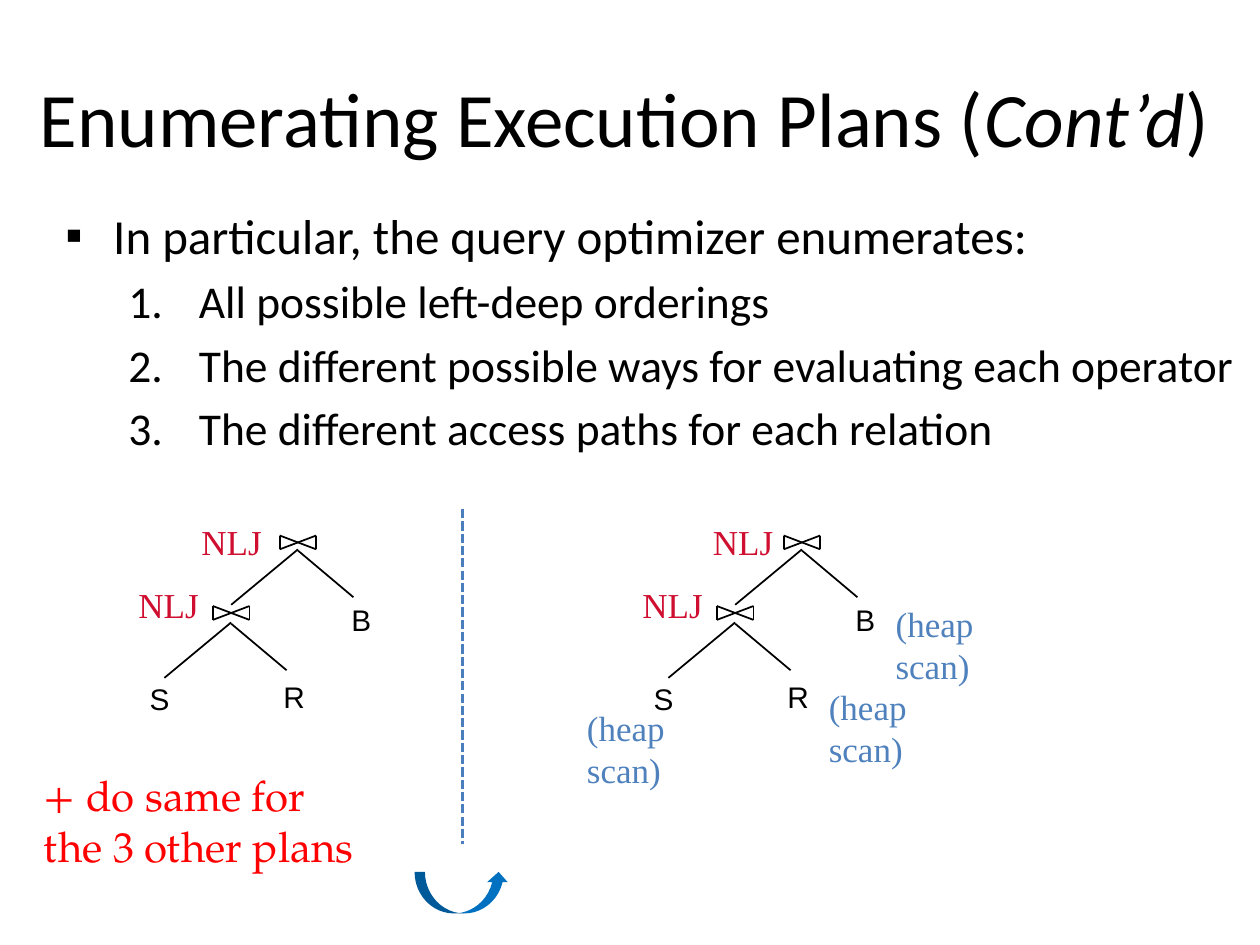
import lxml.etree
import pptx
import pptx.dml.color
import pptx.enum.dml
import pptx.enum.shapes
import pptx.enum.text
import pptx.oxml.ns
import pptx.util
from pptx.util import Inches

BLACK, RED, CRIMSON, BLUE = "000000", "FF0000", "CF0E30", "4F81BD"
SERIF = "Times New Roman"


def color(value):
    return pptx.dml.color.RGBColor.from_string(value)


def child(parent, tag, **attrs):
    return lxml.etree.SubElement(parent, pptx.oxml.ns.qn(tag), attrs)


def set_font(p, size, name, fill):
    p.font.size = pptx.util.Pt(size)
    p.font.name = name
    p.font.color.rgb = color(fill)


def add_box(s, x, y, w, h, wrap=True):
    tf = s.shapes.add_textbox(Inches(x), Inches(y), Inches(w), Inches(h)).text_frame
    tf.word_wrap = wrap
    return tf


def add_label(s, x, y, w, h, text, size, name, fill, wrap=False):
    tf = add_box(s, x, y, w, h, wrap)
    tf.auto_size = pptx.enum.text.MSO_AUTO_SIZE.SHAPE_TO_FIT_TEXT
    p = tf.paragraphs[0]
    p.text = text
    set_font(p, size, name, fill)


def add_line(s, x1, y1, x2, y2, fill=BLACK, width=1):
    line = s.shapes.add_connector(
        pptx.enum.shapes.MSO_CONNECTOR.STRAIGHT,
        Inches(x1), Inches(y1), Inches(x2), Inches(y2))
    line.line.color.rgb = color(fill)
    line.line.width = pptx.util.Pt(width)
    child(line._element.spPr, "a:effectLst")
    return line


def add_title(s, x, y, w, h):
    tf = add_box(s, x, y, w, h)
    tf.vertical_anchor = pptx.enum.text.MSO_ANCHOR.MIDDLE
    p = tf.paragraphs[0]
    p.alignment = pptx.enum.text.PP_ALIGN.CENTER
    set_font(p, 44, "Calibri", BLACK)
    for text, italic in (("Enumerating Execution Plans (", False), ("Cont’d", True), (")", False)):
        r = p.add_run()
        r.text = text
        r.font.italic = italic


def add_outline(s, x, y, w, h, heading, items):
    tf = add_box(s, x, y, w, h)
    for i, text in enumerate([heading] + items):
        p = tf.paragraphs[0] if i == 0 else tf.add_paragraph()
        p.text = text
        p.level = min(i, 1)
        size, margin, hanging = (26, 1.06, 0.56) if i else (28, 0.38, 0.38)
        set_font(p, size, "Calibri", BLACK)
        p.space_before = pptx.util.Pt(size * 0.2)
        pPr = p._p.get_or_add_pPr()
        pPr.set("marL", str(Inches(margin)))
        pPr.set("indent", str(-Inches(hanging)))
        if i:
            child(pPr, "a:buFont", typeface="+mj-lt")
            child(pPr, "a:buAutoNum", type="arabicPeriod")
        else:
            child(pPr, "a:buFont", typeface="Arial")
            child(pPr, "a:buChar", char="▪")


def add_join(s, x, y, branch_gap, w=0.29, h=0.11):
    right, bottom = x + w, y + h
    for ends in ((x, y, x, bottom), (right, y, right, bottom),
                 (x, y, right, bottom), (x, bottom, right, y)):
        add_line(s, *ends)
    middle, top = x + w / 2, bottom + branch_gap
    add_line(s, middle - 0.53, top + 0.44, middle, top)
    add_line(s, middle, top + 0.01, middle + 0.44, top + 0.38)


def add_plan(s, x, y, top_method_x, scans=()):
    for dx, dy, gap in ((0.69, 0.73, 0.02), (1.22, 0.17, 0)):
        add_join(s, x + dx, y + dy, gap)
    for text, dx, dy in (("R", 1.15, 1.26), ("S", 0.09, 1.27), ("B", 1.69, 0.65)):
        add_label(s, x + dx, y + dy, 0.37, 0.38, text, 17, "Arial", BLACK)
    for dx, dy in ((top_method_x, 0), (0, 0.5)):
        add_label(s, x + dx, y + dy, 0.68, 0.43, "NLJ", 20, SERIF, CRIMSON)
    for dx, dy in scans:
        add_label(s, x + dx, y + dy, 1.47, 0.43, "(heap scan)", 20, SERIF, BLUE)


def add_divider(s, x, y, h):
    line = add_line(s, x, y, x, y + h, "4B7EBC", 1.75)
    line.line.dash_style = pptx.enum.dml.MSO_LINE.SQUARE_DOT


def add_turn_arrow(s, x, y, w, h):
    arrow = s.shapes.add_shape(
        pptx.enum.shapes.MSO_SHAPE.CURVED_UP_ARROW,
        Inches(x), Inches(y), Inches(w), Inches(h))
    arrow.shadow.inherit = False
    arrow.fill.solid()
    arrow.fill.fore_color.rgb = color("0070C0")
    arrow.line.fill.background()


def main():
    prs = pptx.Presentation()
    prs.slide_width, prs.slide_height = Inches(10), Inches(7.5)
    s = prs.slides.add_slide(prs.slide_layouts[6])
    add_title(s, 0.08, 0.3, 9.75, 1.25)
    add_outline(s, 0.42, 1.58, 9.58, 5.75, "In particular, the query optimizer enumerates:", [
        "All possible left-deep orderings",
        "The different possible ways for evaluating each operator",
        "The different access paths for each relation",
    ])
    add_label(s, 0.25, 6.06, 2.72, 0.91, "+ do same for the 3 other plans",
              24, "TeX Gyre Pagella", RED, wrap=True)
    add_plan(s, 1, 4.08, 0.5)
    add_divider(s, 3.67, 4.04, 2.66)
    add_turn_arrow(s, 3.29, 6.92, 0.75, 0.33)
    add_plan(s, 5, 4.08, 0.56, [(1.48, 1.31), (2.01, 0.65), (-0.44, 1.48)])
    prs.save("out.pptx")


if __name__ == "__main__":
    main()
